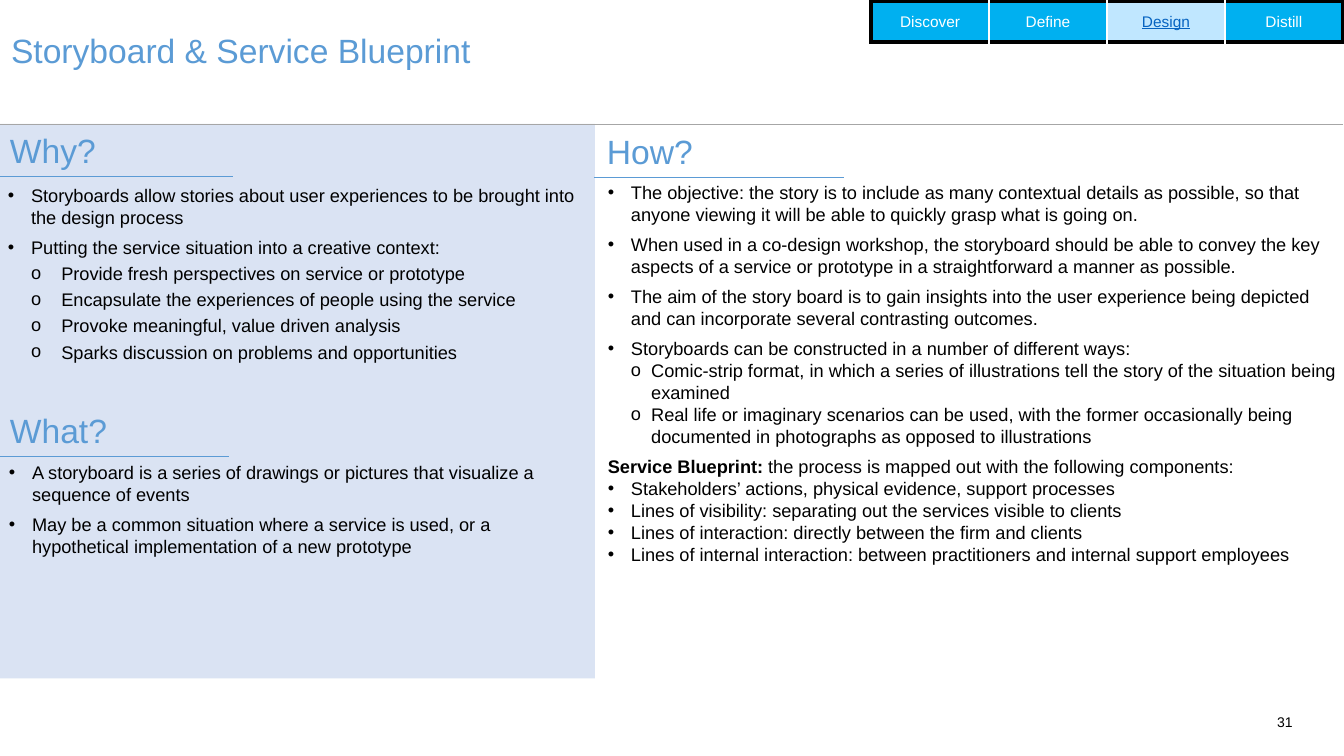
from lxml import etree
from pptx import Presentation
from pptx.dml.color import RGBColor
from pptx.enum.shapes import MSO_CONNECTOR, MSO_SHAPE
from pptx.enum.text import MSO_ANCHOR, MSO_AUTO_SIZE, PP_ALIGN
from pptx.oxml.ns import qn
from pptx.util import Inches, Pt

LEFT, CENTER, RIGHT = PP_ALIGN.LEFT, PP_ALIGN.CENTER, PP_ALIGN.RIGHT
TOP, MIDDLE = MSO_ANCHOR.TOP, MSO_ANCHOR.MIDDLE
NO_FIT = MSO_AUTO_SIZE.NONE
RECTANGLE, STRAIGHT = MSO_SHAPE.RECTANGLE, MSO_CONNECTOR.STRAIGHT

FONT = "Arial"
BLUE, GREY, BLACK, WHITE = "5B9BD5", "A6A6A6", "000000", "FFFFFF"
PANEL, TAB, ACTIVE_TAB, LINK = "DAE3F3", "00B0F0", "C0E7FF", "0563C1"

# Each entry: text, bullet, left margin, space after
WHY = [
    ("Storyboards allow stories about user experiences to be brought into the design process", "•", 0.23, 6),
    ("Putting the service situation into a creative context:", "•", 0.23, 3),
    ("Provide fresh perspectives on service or prototype", "o", 0.53, 3),
    ("Encapsulate the experiences of people using the service", "o", 0.53, 3),
    ("Provoke meaningful, value driven analysis", "o", 0.53, 3),
    ("Sparks discussion on problems and opportunities", "o", 0.53, 0),
]
WHAT = [
    ("A storyboard is a series of drawings or pictures that visualize a sequence of events", "•", 0.23, 6),
    ("May be a common situation where a service is used, or a hypothetical implementation of a new prototype",
     "•", 0.23, 6),
]
HOW = [
    ("The objective: the story is to include as many contextual details as possible, so that anyone viewing it "
     "will be able to quickly grasp what is going on.", "•", 0.23, 6),
    ("When used in a co-design workshop, the storyboard should be able to convey the key aspects of a service or "
     "prototype in a straightforward a manner as possible.", "•", 0.23, 6),
    ("The aim of the story board is to gain insights into the user experience being depicted and can incorporate "
     "several contrasting outcomes.", "•", 0.23, 6),
    ("Storyboards can be constructed in a number of different ways:", "•", 0.23, 0),
    ("Comic-strip format, in which a series of illustrations tell the story of the situation being examined",
     "o", 0.43, 0),
    ("Real life or imaginary scenarios can be used, with the former occasionally being documented in photographs "
     "as opposed to illustrations", "o", 0.43, 6),
    ("Service Blueprint: |the process is mapped out with the following components:", None, 0, 0),
    ("Stakeholders’ actions, physical evidence, support processes", "•", 0.23, 0),
    ("Lines of visibility: separating out the services visible to clients", "•", 0.23, 0),
    ("Lines of interaction: directly between the firm and clients", "•", 0.23, 0),
    ("Lines of internal interaction: between practitioners and internal support employees", "•", 0.23, 0),
]
STAGES = ["Discover", "Define", "Design", "Distill"]


def rgb(value):
    return RGBColor.from_string(value)


def write(paragraph, text, size=13, color=BLACK, align=LEFT, underline=None, after=0):
    """Fill a paragraph; text before a | is bold."""
    paragraph.alignment = align
    paragraph.space_before, paragraph.space_after = Pt(0), Pt(after)
    lead, mark, rest = text.rpartition("|")
    for part, bold in ((lead, True), (rest, False)):
        if part:
            run = paragraph.add_run()
            run.text = part
            font = run.font
            font.name, font.size, font.bold, font.underline = FONT, Pt(size), bold, underline
            font.color.rgb = rgb(color)


def set_bullet(paragraph, character, margin, hanging):
    properties = paragraph._p.get_or_add_pPr()
    properties.set("marL", str(Inches(margin)))
    properties.set("indent", str(-Inches(hanging)))
    if character:
        etree.SubElement(properties, qn("a:buFont")).set("typeface", FONT)
        etree.SubElement(properties, qn("a:buChar")).set("char", character)


def add_text_box(slide, left, top, width, height, inset=True):
    box = slide.shapes.add_textbox(Inches(left), Inches(top), Inches(width), Inches(height))
    frame = box.text_frame
    frame.word_wrap = True
    if not inset:
        frame.margin_left = frame.margin_right = frame.margin_top = frame.margin_bottom = 0
    return frame


def add_rule(slide, left, top, length, color=BLUE):
    line = slide.shapes.add_connector(STRAIGHT, Inches(left), Inches(top), Inches(left + length), Inches(top))
    line.line.color.rgb = rgb(color)
    line.line.width = Pt(0.5)
    etree.SubElement(line._element.spPr, qn("a:effectLst"))


def add_title(slide, left, top, width, height):
    title = slide.shapes.title
    title.left, title.top, title.width, title.height = map(Inches, (left, top, width, height))
    frame = title.text_frame
    frame.auto_size, frame.vertical_anchor, frame.word_wrap = NO_FIT, TOP, True
    write(frame.paragraphs[0], "Storyboard & Service Blueprint", size=24, color=BLUE)


def add_heading(slide, text, left, top, rule_left, rule_length):
    write(add_text_box(slide, left, top, 1.22, 0.51).paragraphs[0], text, size=24, color=BLUE)
    add_rule(slide, rule_left, top + 0.51, rule_length)


def add_bullets(slide, items, left, top, width, height):
    frame = add_text_box(slide, left, top, width, height)
    for index, (text, character, margin, after) in enumerate(items):
        paragraph = frame.add_paragraph() if index else frame.paragraphs[0]
        if character == "o":
            paragraph.level = 1
        hanging = margin - 0.23 if character == "o" else margin
        set_bullet(paragraph, character, margin, hanging)
        write(paragraph, text, after=after)


def set_border(cell, side, color, width):
    properties = cell._tc.get_or_add_tcPr()
    border = etree.SubElement(properties, qn(f"a:ln{side}"), w=str(Pt(width)))
    fill = etree.SubElement(border, qn("a:solidFill"))
    etree.SubElement(fill, qn("a:srgbClr"), val=color)


def add_stage_tabs(slide, left, top, width, height, active):
    table = slide.shapes.add_table(1, len(STAGES), Inches(left), Inches(top), Inches(width), Inches(height)).table
    table.first_row = table.horz_banding = False
    for index, stage in enumerate(STAGES):
        table.columns[index].width = Inches(width / len(STAGES))
        cell = table.cell(0, index)
        outer = {"L": index == 0, "R": index == len(STAGES) - 1, "T": True, "B": True}
        for side, is_outer in outer.items():
            set_border(cell, side, *((BLACK, 3) if is_outer else (WHITE, 1)))
        is_active = stage == active
        cell.fill.solid()
        cell.fill.fore_color.rgb = rgb(ACTIVE_TAB if is_active else TAB)
        cell.vertical_anchor = MIDDLE
        write(cell.text_frame.paragraphs[0], stage, size=11, color=LINK if is_active else WHITE,
              align=CENTER, underline=is_active)


def add_panel(slide, left, top, width, height):
    panel = slide.shapes.add_shape(RECTANGLE, Inches(left), Inches(top), Inches(width), Inches(height))
    panel.shadow.inherit = False
    panel.fill.solid()
    panel.fill.fore_color.rgb = rgb(PANEL)
    panel.line.fill.background()


def main():
    presentation = Presentation()
    presentation.slide_width, presentation.slide_height = Inches(13.33), Inches(7.5)
    slide = presentation.slides.add_slide(presentation.slide_layouts[5])
    add_title(slide, 0.01, 0.25, 11.56, 0.5)
    add_panel(slide, 0, 1.23, 5.9, 5.5)
    add_heading(slide, "Why?", 0, 1.24, -0.02, 2.33)
    add_bullets(slide, WHY, -0.02, 1.78, 5.91, 1.88)
    add_heading(slide, "What?", 0, 4.02, -0.02, 2.29)
    add_bullets(slide, WHAT, -0.01, 4.53, 5.91, 1.36)
    add_heading(slide, "How?", 5.92, 1.25, 5.89, 2.48)
    add_bullets(slide, HOW, 5.93, 1.75, 7.41, 3.94)
    add_rule(slide, -0.02, 1.23, 13.34, GREY)
    add_stage_tabs(slide, 8.64, 0.01, 4.68, 0.41, active="Design")
    page_number = add_text_box(slide, 12.48, 7.08, 0.34, 0.17, inset=False)
    write(page_number.paragraphs[0], "31", size=10, align=RIGHT)
    presentation.save("out.pptx")


if __name__ == "__main__":
    main()
